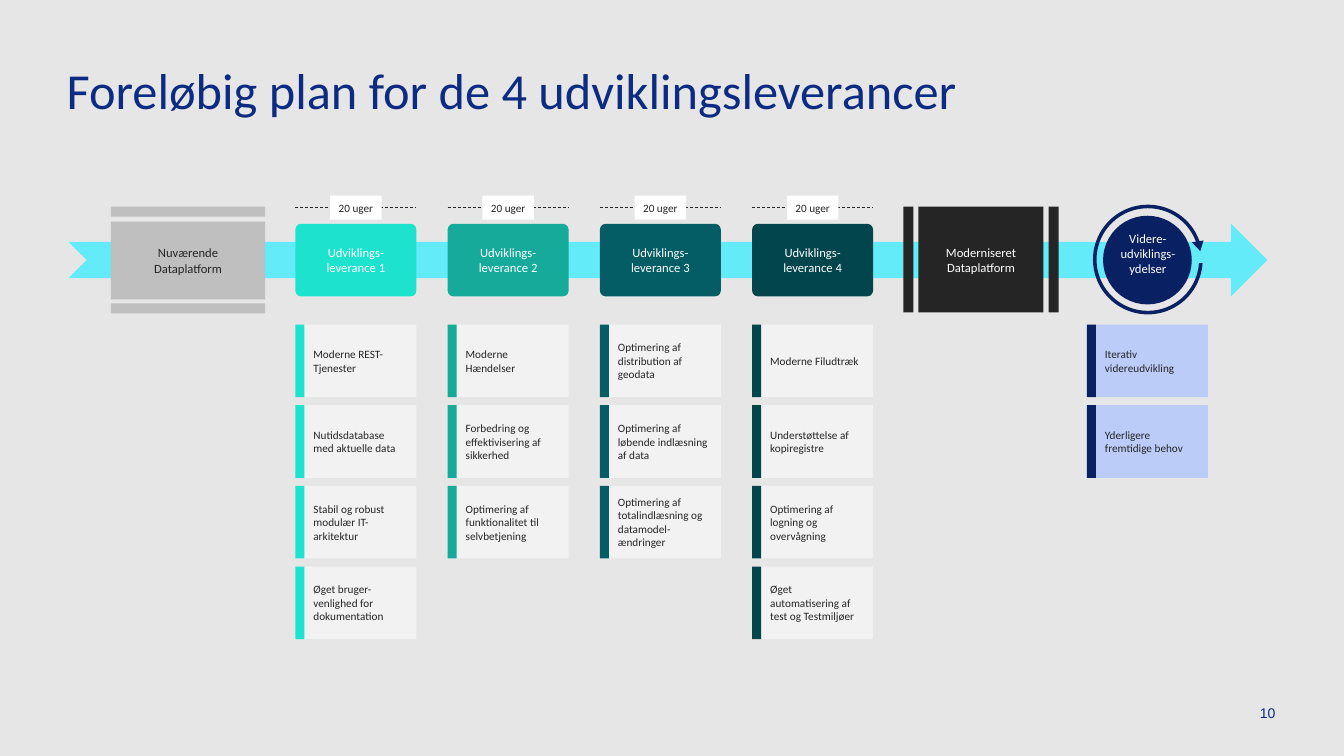
from lxml import etree
from pptx import Presentation
from pptx.dml.color import RGBColor
from pptx.enum.dml import MSO_LINE
from pptx.enum.shapes import MSO_CONNECTOR, MSO_SHAPE
from pptx.enum.text import MSO_ANCHOR, PP_ALIGN
from pptx.oxml.ns import qn
from pptx.util import Inches, Pt

RECT, ROUNDED, OVAL = MSO_SHAPE.RECTANGLE, MSO_SHAPE.ROUNDED_RECTANGLE, MSO_SHAPE.OVAL
TIMELINE, CYCLE = MSO_SHAPE.NOTCHED_RIGHT_ARROW, MSO_SHAPE.CIRCULAR_ARROW
LEFT, CENTER, RIGHT = PP_ALIGN.LEFT, PP_ALIGN.CENTER, PP_ALIGN.RIGHT
TOP, MIDDLE, BOTTOM = MSO_ANCHOR.TOP, MSO_ANCHOR.MIDDLE, MSO_ANCHOR.BOTTOM

TITLE = "Foreløbig plan for de 4 udviklingsleverancer"
PAGE_NUMBER = "10"
DURATION = "20 uger"
CURRENT = "Nuværende\nDataplatform"
MODERNISED = "Moderniseret\nDataplatform"
FURTHER = "Videre-udviklings-ydelser"
DELIVERIES = [
    ("Udviklings-leverance 1", "1DE2CD", [
        "Moderne REST-Tjenester", "Nutidsdatabase med aktuelle data",
        "Stabil og robust modulær IT-arkitektur",
        "Øget bruger-venlighed for dokumentation"]),
    ("Udviklings-leverance 2", "16AA9A", [
        "Moderne Hændelser", "Forbedring og effektivisering af sikkerhed",
        "Optimering af funktionalitet til selvbetjening"]),
    ("Udviklings-leverance 3", "045C65", [
        "Optimering af distribution af geodata",
        "Optimering af løbende indlæsning af data",
        "Optimering af totalindlæsning og datamodel-ændringer"]),
    ("Udviklings-leverance 4", "03454C", [
        "Moderne Filudtræk", "Understøttelse af kopiregistre",
        "Optimering af logning og overvågning",
        "Øget automatisering af test og Testmiljøer"]),
]
FURTHER_NEEDS = ["Iterativ videreudvikling", "Yderligere fremtidige behov"]

BACKGROUND, BLUE, NAVY, PALE_BLUE = "E7E6E6", "0C2C83", "092162", "BCCCF9"
CYAN, GREY, DARK, CARD, WHITE = "63EBF9", "BFBFBF", "252525", "F2F2F2", "FFFFFF"

FIRST_X, COLUMN_PITCH, COLUMN_W = 2.93, 1.51, 1.2
FIRST_Y, ROW_PITCH, BOX_H = 3.22, 0.8, 0.72
FURTHER_X = 10.78
BAND_Y = 2.22
DURATION_Y, TAG_W, TAG_H = 2.06, 0.51, 0.24

prs = Presentation()
prs.slide_width, prs.slide_height = Inches(13.33), Inches(7.5)
slide = prs.slides.add_slide(prs.slide_layouts[6])


def paint(fill, color):
    fill.solid()
    fill.fore_color.rgb = RGBColor.from_string(color)


def write(shape, text, size, color, align=CENTER, anchor=MIDDLE, font="Calibri", inset=True):
    frame = shape.text_frame
    frame.text = text
    frame.word_wrap = True
    frame.vertical_anchor = anchor
    if not inset:
        frame.margin_left = frame.margin_right = frame.margin_top = frame.margin_bottom = 0
    for paragraph in frame.paragraphs:
        paragraph.alignment = align
        for run in paragraph.runs:
            run.font.size, run.font.name = Pt(size), font
            run.font.color.rgb = RGBColor.from_string(color)
    return frame


def add_block(kind, x, y, w, h, color, adjustments=()):
    block = slide.shapes.add_shape(kind, Inches(x), Inches(y), Inches(w), Inches(h))
    block.shadow.inherit = False
    paint(block.fill, color)
    block.line.fill.background()
    for i, value in enumerate(adjustments):
        block.adjustments[i] = value
    return block


def add_label(x, y, w, h, *args, **options):
    box = slide.shapes.add_textbox(Inches(x), Inches(y), Inches(w), Inches(h))
    return write(box, *args, inset=False, **options)


def add_cards(x, texts, accent, color):
    """Stack of cards, each with an accent bar on its left edge."""
    for row, text in enumerate(texts):
        y = FIRST_Y + row * ROW_PITCH
        card = add_block(RECT, x + 0.08, y, COLUMN_W - 0.08, BOX_H, color)
        write(card, text, 8, DARK, LEFT)
        add_block(RECT, x, y, 0.09, BOX_H, accent)


def add_duration(x):
    dashes = slide.shapes.add_connector(
        MSO_CONNECTOR.STRAIGHT, Inches(x), Inches(DURATION_Y),
        Inches(x + COLUMN_W), Inches(DURATION_Y))
    paint(dashes.line.fill, DARK)
    dashes.line.width = Pt(0.5)
    dashes.line.dash_style = MSO_LINE.DASH
    etree.SubElement(dashes._element.spPr, qn("a:effectLst"))
    tag = add_block(RECT, x + (COLUMN_W - TAG_W) / 2, DURATION_Y - TAG_H / 2,
                    TAG_W, TAG_H, WHITE)
    write(tag, DURATION, 8, DARK, inset=False)


paint(slide.background.fill, BACKGROUND)
title = add_label(0.66, 0.65, 12.01, 0.88, TITLE, 36, BLUE, LEFT, TOP)
title.paragraphs[0].line_spacing = 0.9
add_label(11.78, 6.78, 0.87, 0.38, PAGE_NUMBER, 10, BLUE, RIGHT, BOTTOM, "Arial")

add_block(TIMELINE, 0.68, BAND_Y, 11.89, BOX_H, CYAN, (0.5, 0.5))

write(add_block(RECT, 1.1, 2.2, 1.53, 0.77, GREY), CURRENT, 9, DARK)
for bar_y in (2.05, 3.01):
    add_block(RECT, 1.1, bar_y, 1.53, 0.1, GREY)

for column, (name, color, features) in enumerate(DELIVERIES):
    x = FIRST_X + column * COLUMN_PITCH
    delivery = add_block(ROUNDED, x, BAND_Y, COLUMN_W, BOX_H, color, (0.08,))
    write(delivery, name, 9, WHITE)
    add_cards(x, features, color, CARD)
    add_duration(x)

write(add_block(RECT, 9.11, 2.05, 1.24, 1.05, DARK), MODERNISED, 9, WHITE)
for bar_x in (8.96, 10.4):
    add_block(RECT, bar_x, 2.05, 0.1, 1.05, DARK)

add_cards(FURTHER_X, FURTHER_NEEDS, NAVY, PALE_BLUE)
add_block(CYCLE, 10.8, 1.99, 1.17, 1.17, NAVY, (0.03, 6.49, 204.02, 2.35, 0.05))
add_block(OVAL, 10.94, 2.14, 0.88, 0.88, NAVY)
add_label(11.05, 2.29, 0.67, 0.57, FURTHER, 9, WHITE, CENTER, TOP)

prs.save("out.pptx")
